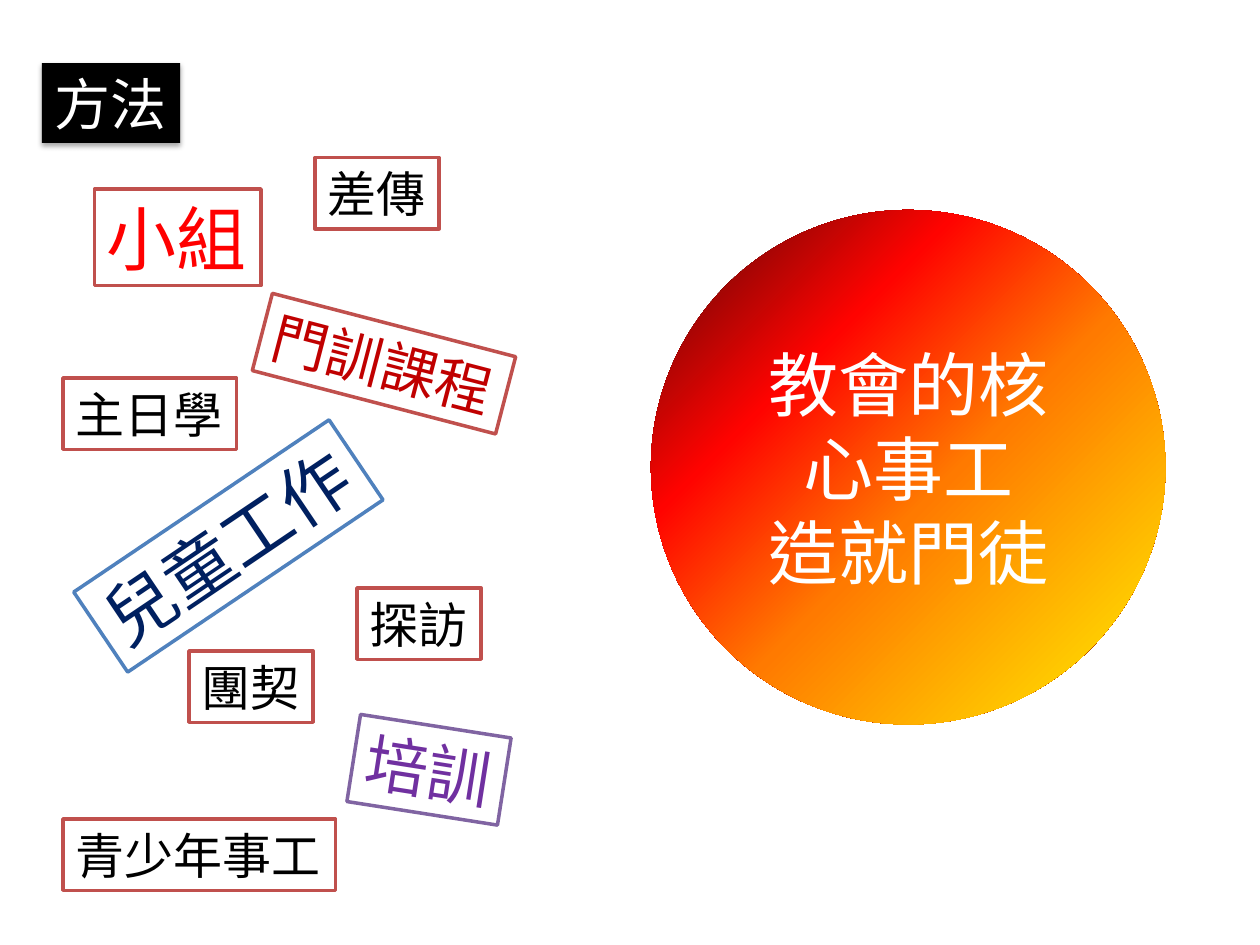
from dataclasses import dataclass

from lxml.etree import SubElement
from pptx import Presentation
from pptx.dml.color import RGBColor
from pptx.enum.lang import MSO_LANGUAGE_ID as Lang
from pptx.enum.shapes import MSO_SHAPE as Shape
from pptx.enum.text import MSO_ANCHOR as Anchor, MSO_AUTO_SIZE as AutoSize, PP_ALIGN as Align
from pptx.oxml import parse_xml
from pptx.oxml.ns import qn
from pptx.util import Pt

COLORS = {
    "white": "FFFFFF", "black": "000000", "red": "FF0000", "dark red": "C00000",
    "purple": "7030A0", "navy": "002060", "brick": "C0504D", "violet": "8064A2",
    "blue": "4F81BD",
}
CORE_GRADIENT = [(0, "FFF200"), (45, "FF7A00"), (70, "FF0300"), (100, "4D0808")]
DRAWING_NS = 'xmlns:a="http://schemas.openxmlformats.org/drawingml/2006/main"'


@dataclass
class Label:
    text: str
    left: float
    top: float
    size: float = 28
    color: str = "black"
    border: str | None = "brick"
    fill: str = "white"
    rotation: float = 0


METHODS = [
    Label("小組", 54, 108, size=40, color="red"),
    Label("主日學", 36, 216),
    Label("團契", 108, 372),
    Label("差傳", 180, 90),
    Label("門訓課程", 147.6, 185, size=32, color="dark red", rotation=14.6),
    Label("培訓", 201.6, 414.7, size=36, color="purple", border="violet", rotation=8.9),
    Label("探訪", 204, 336),
    Label("兒童工作", 42.5, 284.4, size=40, color="navy", border="blue", rotation=-34),
    Label("青少年事工", 36, 468),
]
HEADING = Label("方法", 24, 36, size=32, color="white", border=None, fill="black")


def rgb(name: str) -> RGBColor:
    return RGBColor.from_string(COLORS[name])


def write(frame, *lines: str, size: float, color: str, align=None) -> None:
    for number, line in enumerate(lines):
        paragraph = frame.paragraphs[0] if number == 0 else frame.add_paragraph()
        paragraph.alignment = align
        run = paragraph.add_run()
        run.text = line
        run.font.name = "Arial"
        run.font.size = Pt(size)
        run.font.color.rgb = rgb(color)
        run.font.language_id = Lang.TRADITIONAL_CHINESE


def draw_label(slide, label: Label):
    """Draw a box sized to its full-width characters plus the default insets."""
    width = len(label.text) * label.size * 1.01 + 14.4
    height = label.size * 1.2 + 7.2
    box = slide.shapes.add_textbox(Pt(label.left), Pt(label.top), Pt(width), Pt(height))
    box.rotation = label.rotation
    box.fill.solid()
    box.fill.fore_color.rgb = rgb(label.fill)
    if label.border:
        box.line.color.rgb = rgb(label.border)
        box.line.width = Pt(2)
    box.text_frame.word_wrap = False
    box.text_frame.auto_size = AutoSize.SHAPE_TO_FIT_TEXT
    write(box.text_frame, label.text, size=label.size, color=label.color)
    return box


def add_soft_shadow(box) -> None:
    effects = SubElement(box.element.spPr, qn("a:effectLst"))
    shadow = SubElement(effects, qn("a:outerShdw"), blurRad=str(Pt(3.1)),
                        dist=str(Pt(1.8)), dir="5400000", rotWithShape="0")
    color = SubElement(shadow, qn("a:srgbClr"), val=COLORS["black"])
    SubElement(color, qn("a:alpha"), val="35000")


def fill_from_corner(shape, stops: list[tuple[int, str]]) -> None:
    """Fill with a circular gradient centred on the bottom right corner."""
    stop_xml = "".join(f'<a:gs pos="{position * 1000}"><a:srgbClr val="{color}"/></a:gs>'
                       for position, color in stops)
    shape.fill.gradient()
    properties = shape.element.spPr
    properties.replace(properties.find(qn("a:gradFill")), parse_xml(
        f'<a:gradFill {DRAWING_NS} rotWithShape="1"><a:gsLst>{stop_xml}</a:gsLst>'
        '<a:path path="circle"><a:fillToRect l="100000" t="100000"/></a:path></a:gradFill>'))


def draw_core(slide) -> None:
    core = slide.shapes.add_shape(Shape.OVAL, Pt(372), Pt(120), Pt(294), Pt(294))
    core.shadow.inherit = False
    core.line.fill.background()
    fill_from_corner(core, CORE_GRADIENT)
    core.text_frame.word_wrap = True
    core.text_frame.vertical_anchor = Anchor.MIDDLE
    write(core.text_frame, "教會的核心事工", "造就門徒", size=40, color="white",
          align=Align.CENTER)


def main() -> None:
    deck = Presentation()
    deck.slide_width, deck.slide_height = Pt(720), Pt(540)
    slide = deck.slides.add_slide(deck.slide_layouts[6])
    for method in METHODS:
        draw_label(slide, method)
    add_soft_shadow(draw_label(slide, HEADING))
    draw_core(slide)
    deck.save("out.pptx")


if __name__ == "__main__":
    main()
